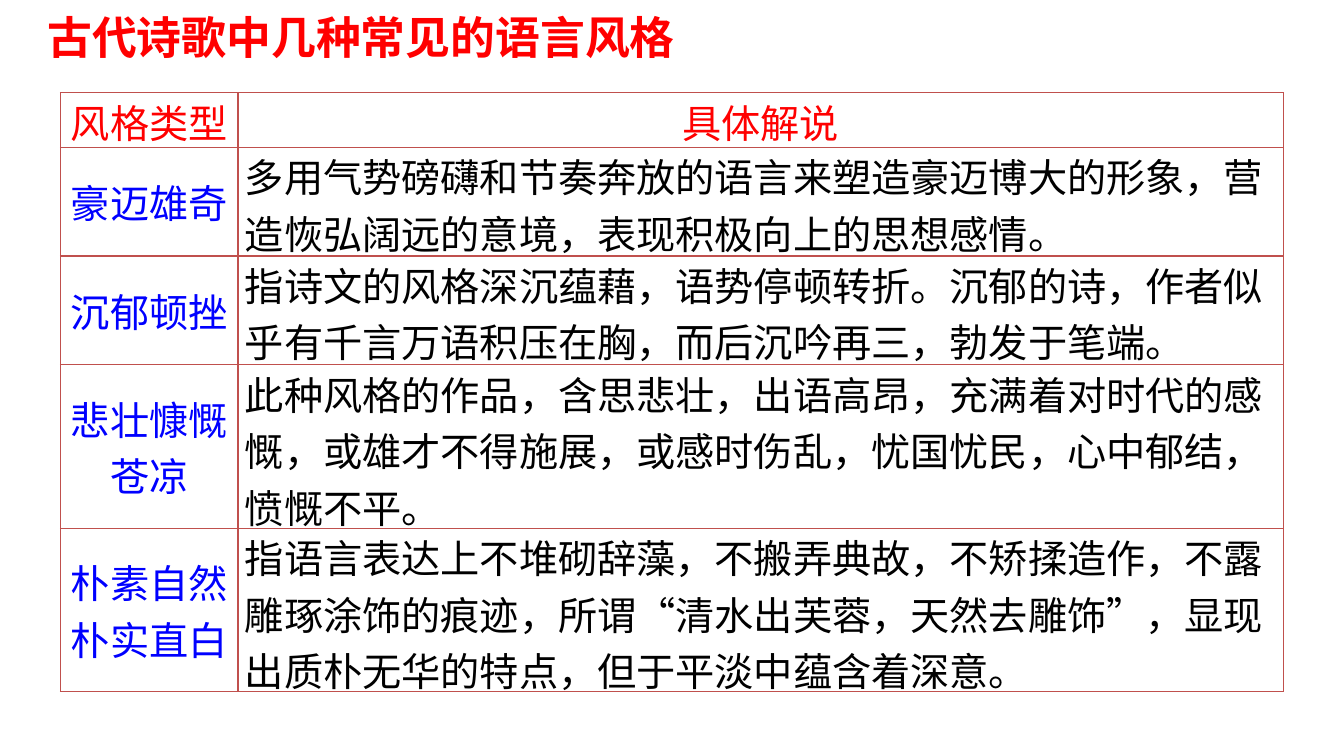
from dataclasses import dataclass

import pptx
import pptx.dml.color
import pptx.enum.lang
import pptx.enum.text
import pptx.oxml.ns
import pptx.util
from lxml import etree

TITLE = "古代诗歌中几种常见的语言风格"
HEADER = ("风格类型", "具体解说")
# Style names (one paragraph each), explanation, lines of height
STYLES = [
    (["豪迈雄奇"],
     "多用气势磅礴和节奏奔放的语言来塑造豪迈博大的形象，营造恢弘阔远的意境，表现积极向上的思想感情。", 2),
    (["沉郁顿挫"],
     "指诗文的风格深沉蕴藉，语势停顿转折。沉郁的诗，作者似乎有千言万语积压在胸，而后沉吟再三，勃发于笔端。", 2),
    (["悲壮慷慨", "苍凉"],
     "此种风格的作品，含思悲壮，出语高昂，充满着对时代的感慨，或雄才不得施展，或感时伤乱，忧国忧民，心中郁结，愤慨不平。", 3),
    (["朴素自然", "朴实直白"],
     "指语言表达上不堆砌辞藻，不搬弄典故，不矫揉造作，不露雕琢涂饰的痕迹，所谓“清水出芙蓉，天然去雕饰”，显现出质朴无华的特点，但于平淡中蕴含着深意。", 3),
]


@dataclass(frozen=True)
class Theme:
    font: str = "Noto Sans CJK SC"
    title_size: int = 32
    table_size: int = 28
    red: str = "FF0000"
    blue: str = "0000FF"
    black: str = "000000"
    border: str = "C0504D"


THEME = Theme()
CENTER = pptx.enum.text.PP_ALIGN.CENTER
LEFT = pptx.enum.text.PP_ALIGN.LEFT
inches = pptx.util.Inches
qn = pptx.oxml.ns.qn

SLIDE_SIZE = (13.33, 7.5)
TITLE_BOX = (0.37, 0.05, 8.43, 0.64)
TABLE_LEFT, TABLE_TOP = 0.6, 0.92
COLUMNS = (1.76, 10.37)
LINE_HEIGHT = 0.54
CELL_INSET = 0.07


def write(frame, lines, size, color, align=LEFT, bold=False):
    for index, line in enumerate(lines):
        para = frame.add_paragraph() if index else frame.paragraphs[0]
        para.alignment = align
        span = para.add_run()
        span.text = line
        font = span.font
        font.size = pptx.util.Pt(size)
        font.bold = bold
        font.name = THEME.font
        font.language_id = pptx.enum.lang.MSO_LANGUAGE_ID.SIMPLIFIED_CHINESE
        font.color.rgb = pptx.dml.color.RGBColor.from_string(color)
        latin = span.font._element.find(qn("a:latin"))
        east_asian = etree.Element(qn("a:ea"), typeface=THEME.font)
        latin.addnext(east_asian)


def draw_borders(cell):
    properties = cell._tc.get_or_add_tcPr()
    for index, side in enumerate(("a:lnL", "a:lnR", "a:lnT", "a:lnB")):
        line = etree.Element(qn(side), w=str(pptx.util.Pt(1)))
        fill = etree.SubElement(line, qn("a:solidFill"))
        etree.SubElement(fill, qn("a:srgbClr"), val=THEME.border)
        properties.insert(index, line)


def fill_cell(cell, lines, color, align):
    cell.margin_left = cell.margin_right = inches(CELL_INSET)
    cell.margin_top = cell.margin_bottom = 0
    cell.vertical_anchor = pptx.enum.text.MSO_ANCHOR.MIDDLE
    cell.fill.background()
    draw_borders(cell)
    write(cell.text_frame, lines, THEME.table_size, color, align)


def add_title(slide):
    box = slide.shapes.add_textbox(*map(inches, TITLE_BOX))
    box.text_frame.word_wrap = True
    box.text_frame.auto_size = pptx.enum.text.MSO_AUTO_SIZE.SHAPE_TO_FIT_TEXT
    write(box.text_frame, [TITLE], THEME.title_size, THEME.red, bold=True)


def add_style_table(slide):
    line_counts = [1] + [count for _, _, count in STYLES]
    table = slide.shapes.add_table(
        len(line_counts), len(COLUMNS), inches(TABLE_LEFT), inches(TABLE_TOP),
        inches(sum(COLUMNS)), inches(LINE_HEIGHT * sum(line_counts))).table
    table.first_row = table.horz_banding = False
    for column, width in zip(table.columns, COLUMNS):
        column.width = inches(width)
    for row, count in zip(table.rows, line_counts):
        row.height = inches(LINE_HEIGHT * count)

    for column, label in enumerate(HEADER):
        fill_cell(table.cell(0, column), [label], THEME.red, CENTER)
    for row, (names, explanation, _) in enumerate(STYLES, start=1):
        fill_cell(table.cell(row, 0), names, THEME.blue, CENTER)
        fill_cell(table.cell(row, 1), [explanation], THEME.black, LEFT)


def main():
    deck = pptx.Presentation()
    deck.slide_width, deck.slide_height = map(inches, SLIDE_SIZE)
    slide = deck.slides.add_slide(deck.slide_layouts[6])
    add_title(slide)
    add_style_table(slide)
    deck.save("out.pptx")


if __name__ == "__main__":
    main()
